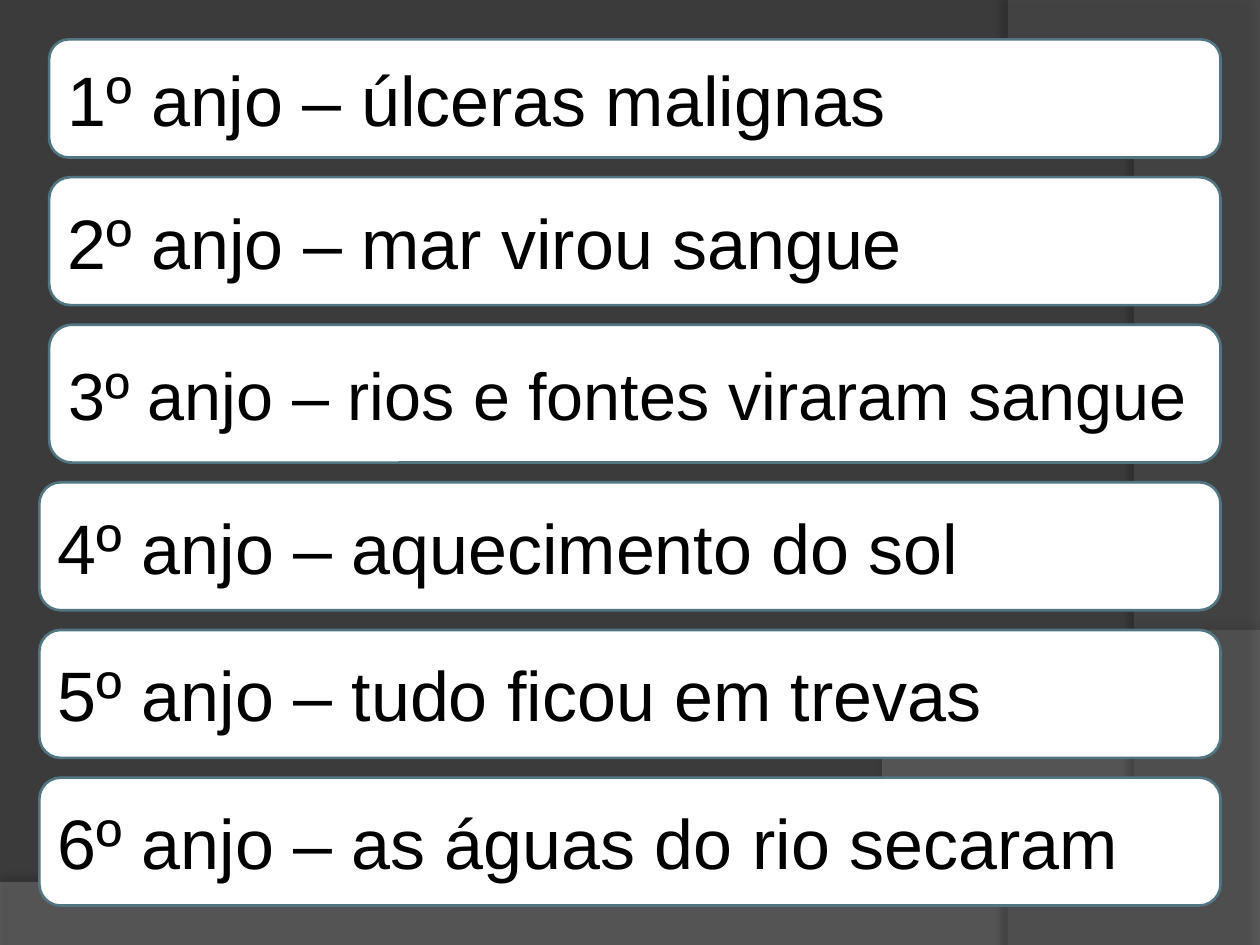
from lxml import etree
from pptx import Presentation, util as u
from pptx.dml.color import RGBColor
from pptx.enum import shapes, text
from pptx.oxml import ns

BACKGROUND = RGBColor(0x3B, 0x3B, 0x3B)
FLOOR_GREY = RGBColor(0x7F, 0x7F, 0x7F)
SIDE_GREY = RGBColor(0x5E, 0x5E, 0x5E)
WHITE = RGBColor(0xFF, 0xFF, 0xFF)
BLACK = RGBColor(0x00, 0x00, 0x00)
TEAL = RGBColor(0x51, 0x76, 0x82)

presentation = Presentation()
presentation.slide_width = u.Inches(10)
presentation.slide_height = u.Inches(7.5)
slide = presentation.slides.add_slide(presentation.slide_layouts[6])
slide.background.fill.solid()
slide.background.fill.fore_color.rgb = BACKGROUND
UNIT = presentation.slide_width // 128
CURVE_STEPS = 48


def add_swoosh(corners, curve, color, opacity, shadow_opacity, distance, direction):
    points = list(corners)
    for step in range(CURVE_STEPS + 1):
        t = step / CURVE_STEPS
        weights = ((1 - t) ** 3, 3 * t * (1 - t) ** 2, 3 * t ** 2 * (1 - t), t ** 3)
        points.append(tuple(sum(w * point[axis] for w, point in zip(weights, curve)) for axis in (0, 1)))
    builder = slide.shapes.build_freeform(*points[0], scale=u.Inches(1))
    builder.add_line_segments(points[1:], close=True)
    shape = builder.convert_to_shape()
    shape.shadow.inherit = False
    shape.line.fill.background()
    shape.fill.solid()
    shape.fill.fore_color.rgb = color
    fill_color = shape.element.spPr.find(ns.qn("a:solidFill"))[0]
    etree.SubElement(fill_color, ns.qn("a:alpha"), val=str(opacity * 1000))
    effects = shape.element.spPr.find(ns.qn("a:effectLst"))
    shadow = etree.SubElement(effects, ns.qn("a:outerShdw"), blurRad=str(u.Pt(4)),
                              dist=str(u.Pt(distance)), dir=str(direction * 60000), rotWithShape="0")
    shadow_color = etree.SubElement(shadow, ns.qn("a:srgbClr"), val=str(BLACK))
    etree.SubElement(shadow_color, ns.qn("a:alpha"), val=str(shadow_opacity * 1000))


def write_text(shape, words, size=40, font="Arial", color=BLACK):
    frame = shape.text_frame
    frame.word_wrap = True
    frame.vertical_anchor = text.MSO_ANCHOR.MIDDLE
    paragraph = frame.paragraphs[0]
    paragraph.alignment = text.PP_ALIGN.LEFT
    run = paragraph.add_run()
    run.text = words
    run.font.size = u.Pt(size)
    run.font.name = font
    run.font.color.rgb = color


add_swoosh([(0, 7.05), (0, 7.5), (10, 7.5)],
           [(10, 5.2), (5.59, 7.29), (3.91, 7.19), (0, 7.05)],
           FLOOR_GREY, 45, 35, 3.5, 270)
add_swoosh([(10, 0.02), (10, 7.5)],
           [(8.21, 7.5), (9.35, 6.19), (10.18, 3), (8, 0)],
           SIDE_GREY, 40, 45, 4, 180)

RIGHT = 124
GAP = 2
angels = [
    ("1º anjo – úlceras malignas", 5, 12, 40),
    ("2º anjo – mar virou sangue", 5, 13, 40),
    ("3º anjo – rios e fontes viraram sangue", 5, 14, 38),
    ("4º anjo – aquecimento do sol", 4, 13, 40),
    ("5º anjo – tudo ficou em trevas", 4, 13, 40),
    ("6º anjo – as águas do rio secaram", 4, 13, 40),
]
top = 4
for words, left, height, size in angels:
    shape = slide.shapes.add_shape(shapes.MSO_SHAPE.ROUNDED_RECTANGLE, left * UNIT, top * UNIT,
                                   (RIGHT - left) * UNIT, height * UNIT)
    shape.shadow.inherit = False
    shape.fill.solid()
    shape.fill.fore_color.rgb = WHITE
    shape.line.color.rgb = TEAL
    shape.line.width = u.Pt(1.5)
    write_text(shape, words, size=size)
    top += height + GAP

presentation.save("out.pptx")
